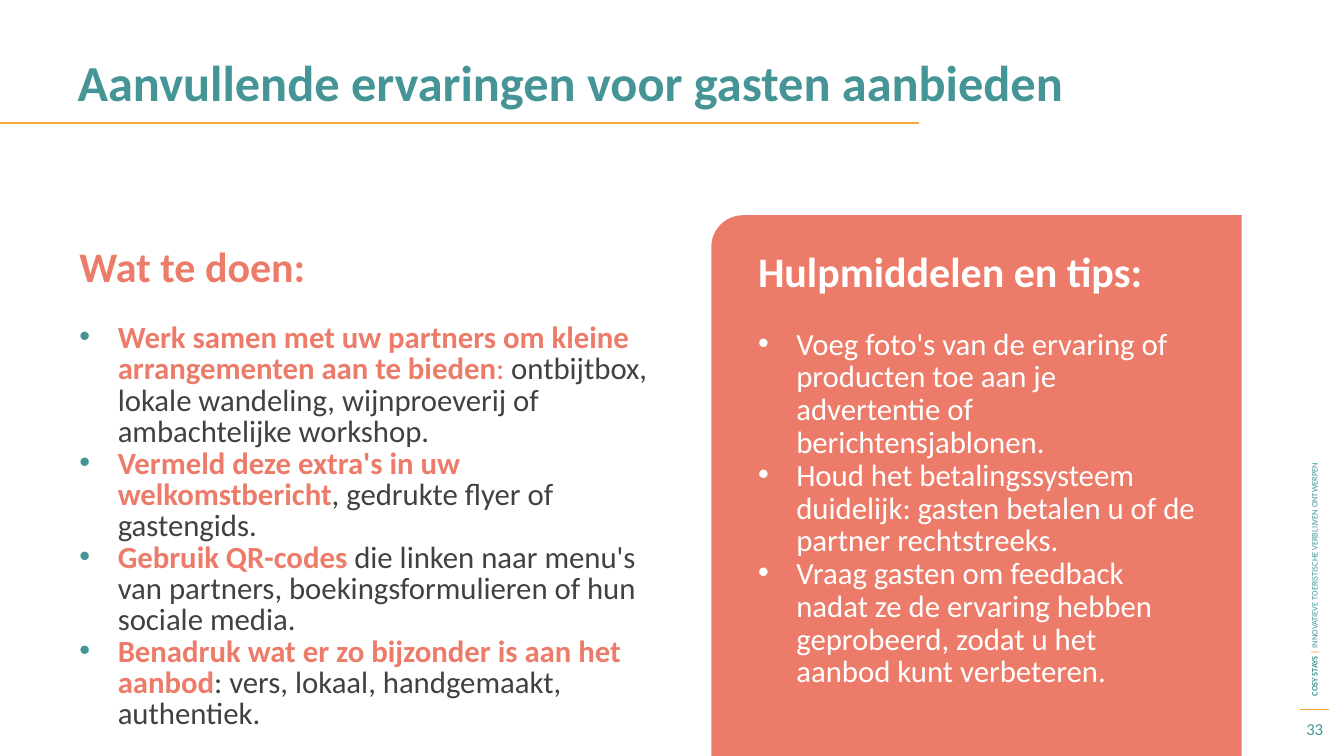
"""Build the slide on offering guests additional experiences."""
from lxml.etree import SubElement
from pptx import Presentation
from pptx.dml.color import RGBColor
from pptx.enum.shapes import MSO_CONNECTOR as Conn, MSO_SHAPE as Shape
from pptx.enum.text import MSO_ANCHOR as Anchor, MSO_AUTO_SIZE as Fit, PP_ALIGN as Align
from pptx.oxml.ns import qn
from pptx.util import Inches, Pt

TEAL = RGBColor(0x45, 0x95, 0x97)
AMBER = RGBColor(0xFB, 0xA6, 0x3B)
CORAL = RGBColor(0xEC, 0x7C, 0x69)
GREY = RGBColor(0x41, 0x41, 0x41)
WHITE = RGBColor(0xFF, 0xFF, 0xFF)

TASKS = [
    [("Werk samen met uw partners om kleine arrangementen aan te bieden", CORAL, True),
     (": ", CORAL, False),
     ("ontbijtbox, lokale wandeling, wijnproeverij of ambachtelijke workshop.", GREY, False)],
    [("Vermeld deze extra's in uw welkomstbericht", CORAL, True),
     (", gedrukte flyer of gastengids.", GREY, False)],
    [("Gebruik QR-codes ", CORAL, True),
     ("die linken naar menu's van partners, boekingsformulieren of hun sociale media.",
      GREY, False)],
    [("Benadruk wat er zo bijzonder is aan het aanbod", CORAL, True),
     (": vers, lokaal, handgemaakt, authentiek.", GREY, False)],
]
TIPS = [
    "Voeg foto's van de ervaring of producten toe aan je advertentie of berichtensjablonen.",
    "Houd het betalingssysteem duidelijk: gasten betalen u of de partner rechtstreeks.",
    "Vraag gasten om feedback nadat ze de ervaring hebben geprobeerd, "
    "zodat u het aanbod kunt verbeteren.",
]

prs = Presentation()
prs.slide_width, prs.slide_height = Inches(13.33), Inches(7.5)
slide = prs.slides.add_slide(prs.slide_layouts[5])
shapes = slide.shapes


def add_box(left, top, width, height, anchor=Anchor.TOP):
    box = shapes.add_textbox(Inches(left), Inches(top), Inches(width), Inches(height))
    box.text_frame.word_wrap = True
    box.text_frame.vertical_anchor = anchor
    return box


def fill_para(para, runs, size, lead=None, dot=None):
    if dot is not None:
        props = para._p.get_or_add_pPr()
        props.set("marL", str(Inches(0.38)))
        props.set("indent", str(Inches(-0.38)))
        tint = SubElement(props, qn("a:buClr"))
        SubElement(tint, qn("a:srgbClr")).set("val", str(dot))
        SubElement(props, qn("a:buFont")).set("typeface", "Arial")
        SubElement(props, qn("a:buChar")).set("char", "•")
    if lead:
        para.line_spacing = Pt(lead)
    for text, color, bold in runs:
        run = para.add_run()
        run.text = text
        run.font.name = "Calibri"
        run.font.size = Pt(size)
        run.font.bold = bold
        run.font.color.rgb = color


title = shapes.title
title.left, title.top = Inches(0.67), Inches(0.54)
title.width, title.height = Inches(12), Inches(0.88)
frame = title.text_frame
frame.word_wrap = True
frame.auto_size = Fit.NONE
frame.vertical_anchor = Anchor.TOP
frame.paragraphs[0].alignment = Align.LEFT
fill_para(frame.paragraphs[0],
          [("Aanvullende ervaringen voor gasten aanbieden", TEAL, True)], 36, 37.2)

for start, end, y, weight in [(0, 9.11, 1.22, 1.5), (12.89, 13.18, 7.04, 0.75)]:
    rule = shapes.add_connector(Conn.STRAIGHT, Inches(start), Inches(y), Inches(end), Inches(y))
    rule.line.color.rgb = AMBER
    rule.line.width = Pt(weight)
    SubElement(rule._element.spPr, qn("a:effectLst"))

side = add_box(10.15, 4.02, 5.77, 0.2, Anchor.MIDDLE)
side.rotation = 270
fill_para(side.text_frame.paragraphs[0],
          [("COSY STAYS ", TEAL, True), ("| ", AMBER, True),
           ("INNOVATIEVE TOERISTISCHE VERBLIJVEN ONTWERPEN", TEAL, False)], 6)

page = add_box(12.78, 7.06, 0.52, 0.34, Anchor.MIDDLE).text_frame.paragraphs[0]
page.alignment = Align.CENTER
fill_para(page, [("33", TEAL, False)], 12)

head = add_box(0.69, 2.43, 6.14, 0.88).text_frame.paragraphs[0]
fill_para(head, [("Wat te doen:", CORAL, True)], 30, 29)

frame = add_box(0.69, 3.16, 6.14, 4).text_frame
for i, runs in enumerate(TASKS):
    para = frame.add_paragraph() if i else frame.paragraphs[0]
    fill_para(para, runs, 22, 22.4, TEAL)

panel = shapes.add_shape(Shape.ROUND_1_RECTANGLE, Inches(7), Inches(2.19),
                         Inches(5.37), Inches(5.26))
panel.rotation = 270
panel.adjustments[0] = 0.06
panel.shadow.inherit = False
panel.fill.solid()
panel.fill.fore_color.rgb = CORAL
panel.line.fill.background()

frame = add_box(7.42, 2.56, 4.54, 3.59).text_frame
fill_para(frame.paragraphs[0], [("Hulpmiddelen en tips:", WHITE, True)], 30, 23.4)
for i, tip in enumerate(TIPS):
    para = frame.add_paragraph()
    fill_para(para, [(tip, WHITE, False)], 22, 23.4, WHITE)
    if i == 0:
        para.space_before = Pt(23.4)

prs.save("out.pptx")
